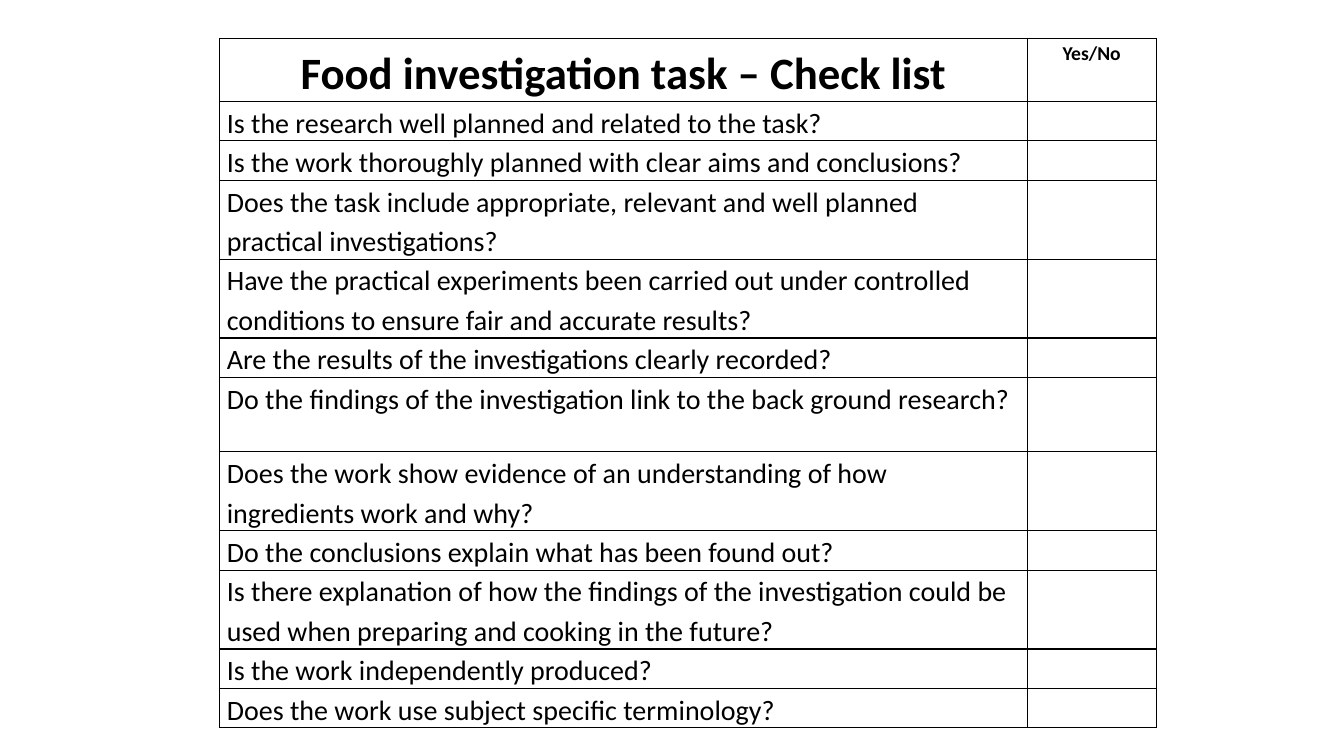
from lxml.etree import SubElement
from pptx import Presentation
from pptx.dml.color import RGBColor
from pptx.enum.text import MSO_ANCHOR, PP_ALIGN
from pptx.oxml.ns import qn
from pptx.util import Pt

BLACK = RGBColor(0, 0, 0)
WHITE = RGBColor(255, 255, 255)
FONT = "Calibri"
HEADING_HEIGHT = 27.4
LINE_HEIGHT = 26.6
ANSWER_WIDTH = 92.2

# Each question with the number of lines its row allows for
QUESTIONS = [
    ("Is the research well planned and related to the task?", 1),
    ("Is the work thoroughly planned with clear aims and conclusions?", 1),
    ("Does the task include appropriate, relevant and well planned practical investigations?", 2),
    ("Have the practical experiments been carried out under controlled conditions "
     "to ensure fair and accurate results?", 2),
    ("Are the results of the investigations clearly recorded?", 1),
    ("Do the findings of the investigation link to the back ground research?", 2),
    ("Does the work show evidence of an understanding of how ingredients work and why?", 2),
    ("Do the conclusions explain what has been found out?", 1),
    ("Is there explanation of how the findings of the investigation could be used "
     "when preparing and cooking in the future?", 2),
    ("Is the work independently produced?", 1),
    ("Does the work use subject specific terminology?", 1),
]


def write(cell, text, size=20, bold=False, align=PP_ALIGN.LEFT):
    paragraph = cell.text_frame.paragraphs[0]
    paragraph.alignment = align
    paragraph.line_spacing = 1.15
    paragraph.space_after = Pt(10)
    run = paragraph.add_run()
    run.text = text
    run.font.name = FONT
    run.font.size = Pt(size)
    run.font.bold = bold
    run.font.color.rgb = BLACK


def style_cell(cell):
    cell.margin_left = cell.margin_right = Pt(5)
    cell.margin_top = cell.margin_bottom = 0
    cell.vertical_anchor = MSO_ANCHOR.TOP
    # Borders come before the fill in the cell properties
    properties = cell._tc.get_or_add_tcPr()
    for side in ("a:lnL", "a:lnR", "a:lnT", "a:lnB"):
        border = SubElement(properties, qn(side), w=str(Pt(1)))
        fill = SubElement(border, qn("a:solidFill"))
        SubElement(fill, qn("a:srgbClr"), val=str(BLACK))
    cell.fill.solid()
    cell.fill.fore_color.rgb = WHITE


def add_checklist(slide, left, top, width):
    heights = [HEADING_HEIGHT] + [LINE_HEIGHT * lines for _, lines in QUESTIONS]
    checklist = slide.shapes.add_table(
        len(heights), 2, Pt(left), Pt(top), Pt(width), Pt(sum(heights))).table
    checklist.first_row = checklist.horz_banding = False
    checklist.columns[0].width = Pt(width - ANSWER_WIDTH)
    checklist.columns[1].width = Pt(ANSWER_WIDTH)
    for row, height in zip(checklist.rows, heights):
        row.height = Pt(height)
    for cell in checklist.iter_cells():
        style_cell(cell)

    # Heading row
    write(checklist.cell(0, 0), "Food investigation task – Check list",
          size=32, bold=True, align=PP_ALIGN.CENTER)
    write(checklist.cell(0, 1), "Yes/No", size=14, bold=True, align=PP_ALIGN.CENTER)

    # Questions, with the answers left open
    for number, (question, _) in enumerate(QUESTIONS, start=1):
        write(checklist.cell(number, 0), question)


def main():
    deck = Presentation()
    deck.slide_width, deck.slide_height = Pt(960), Pt(540)
    slide = deck.slides.add_slide(deck.slide_layouts[6])
    add_checklist(slide, left=157, top=27.4, width=668.9)
    deck.save("out.pptx")


if __name__ == "__main__":
    main()
